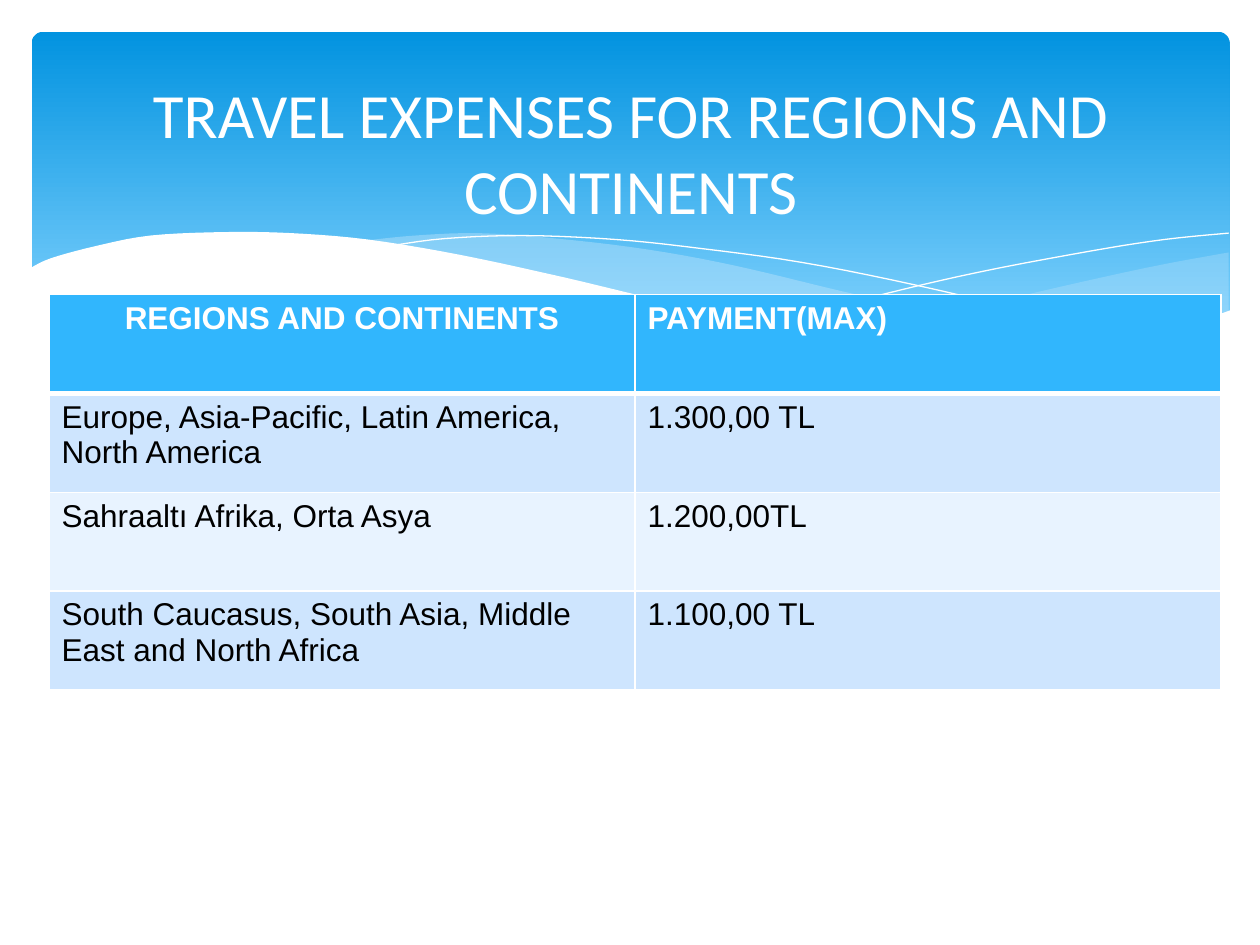
from lxml import etree
from pptx import Presentation
from pptx import util as u
from pptx.dml.color import RGBColor
from pptx.enum import shapes, text
from pptx.oxml.ns import qn

COLORS = {
    "white": "FFFFFF", "black": "000000",
    "band_top": "0293E0", "band_bottom": "83D3FE", "wave": "C6E7FC",
    "header": "31B6FD", "odd_row": "CEE5FE", "even_row": "E8F3FF",
}

# Wave edges in cm from the top left corner of the band.
RIGHT_WAVE_TOP = [(24.13, 4.45), (22.76, 4.7), (21.23, 5.03), (19.15, 5.51),
                  (17.88, 5.79), (16.15, 6.1)]
RIGHT_WAVE_BOTTOM = [(16.15, 6.1), (17.27, 6.25), (18.59, 6.38), (19.76, 6.43),
                     (21.06, 6.38), (22.15, 6.22), (23.11, 6.02), (24.13, 5.64)]
MIDDLE_WAVE_TOP = [(6.63, 4.22), (7.7, 4.11), (9.02, 4.06), (10.59, 4.17),
                   (12.42, 4.39), (14.2, 4.72), (16.33, 5.23), (18.19, 5.64),
                   (19.86, 5.97), (22.05, 6.3)]
MIDDLE_WAVE_BOTTOM = [(22.05, 6.3), (20.9, 6.4), (19.58, 6.43), (18.06, 6.35),
                      (16.26, 6.12), (13.74, 5.66), (10.77, 5), (9.09, 4.62),
                      (7.57, 4.34), (6.63, 4.22)]
FALLING_LINE = [(7.21, 4.32), (8.33, 4.17), (9.93, 4.11), (11.79, 4.19),
                (13.49, 4.37), (15.52, 4.65), (17.83, 5.11), (20.47, 5.74),
                (22.4, 6.27)]
RISING_LINE = [(14.94, 5.89), (17.02, 5.33), (19.08, 4.85), (21.36, 4.42),
               (22.83, 4.19), (24.13, 4.06)]
FRONT_WAVE_TOP = [(24.18, 5.61), (22.99, 6.02), (21.59, 6.3), (19.91, 6.4),
                  (17.81, 6.27), (15.27, 5.92), (12.8, 5.44), (10.72, 4.95),
                  (8.64, 4.5), (6.78, 4.19), (5.21, 4.06), (3.86, 4.04),
                  (2.39, 4.11), (1.3, 4.32), (0.38, 4.57), (-0.05, 4.78)]
FRONT_WAVE_BASE = [(-0.05, 7.72), (24.18, 7.72)]

ROWS = [
    ("REGIONS AND CONTINENTS", "PAYMENT(MAX)"),
    ("Europe, Asia-Pacific, Latin America, North America", "1.300,00 TL"),
    ("Sahraaltı Afrika, Orta Asya", "1.200,00TL"),
    ("South Caucasus, South Asia, Middle East and North Africa", "1.100,00 TL"),
]


def color(name):
    return RGBColor.from_string(COLORS[name])


def smooth(knots, steps=5):
    """Return points on a Catmull-Rom curve through the knots."""
    padded = [knots[0], *knots, knots[-1]]
    points = [knots[0]]
    for a, b, c, d in zip(padded, padded[1:], padded[2:], padded[3:]):
        for step in range(1, steps + 1):
            t = step / steps
            points.append(tuple(
                (2 * q + (r - p) * t + (2 * p - 5 * q + 4 * r - s) * t ** 2
                 + (3 * q - p - 3 * r + s) * t ** 3) / 2
                for p, q, r, s in zip(a, b, c, d)))
    return points


def add_wave(page, box, points, fill=None, opacity=100):
    """Draw a filled wave, or an open white hairline when there is no fill."""
    left, top = box[:2]
    corners = [(u.Cm(left + x), u.Cm(top + y)) for x, y in points]
    builder = page.shapes.build_freeform(*corners[0])
    builder.add_line_segments(corners[1:], close=fill is not None)
    wave = builder.convert_to_shape()
    wave.shadow.inherit = False
    if fill is None:
        wave.fill.background()
        wave.line.color.rgb = color("white")
        wave.line.width = u.Pt(0)
        return
    wave.line.fill.background()
    wave.fill.solid()
    wave.fill.fore_color.rgb = color(fill)
    if opacity < 100:
        tint = wave.fill._xPr.find(qn("a:solidFill"))[0]
        etree.SubElement(tint, qn("a:alpha"), val=str(opacity * 1000))


def add_band(page, box):
    band = page.shapes.add_shape(
        shapes.MSO_SHAPE.ROUNDED_RECTANGLE, *map(u.Cm, box))
    band.adjustments[0] = 0.034
    band.shadow.inherit = False
    band.line.fill.background()
    band.fill.gradient()
    band.fill.gradient_angle = 270
    stops = zip(band.fill.gradient_stops, ("band_top", "band_bottom"), (0, 0.9))
    for stop, name, position in stops:
        stop.color.rgb = color(name)
        stop.position = position

    add_wave(page, box, smooth(RIGHT_WAVE_TOP) + smooth(RIGHT_WAVE_BOTTOM), "wave", 29)
    add_wave(page, box, smooth(MIDDLE_WAVE_TOP) + smooth(MIDDLE_WAVE_BOTTOM), "wave", 40)
    add_wave(page, box, smooth(FALLING_LINE))
    add_wave(page, box, smooth(RISING_LINE))
    add_wave(page, box, smooth(FRONT_WAVE_TOP) + FRONT_WAVE_BASE, "white")


def add_title(page, box, wording):
    frame = page.shapes.add_textbox(*map(u.Cm, box)).text_frame
    frame.word_wrap = True
    frame.vertical_anchor = text.MSO_ANCHOR.MIDDLE
    para = frame.paragraphs[0]
    para.text = wording
    para.alignment = text.PP_ALIGN.CENTER
    para.font.name = "Calibri"
    para.font.size = u.Pt(36)
    para.font.color.rgb = color("white")


def set_borders(cell, bottom):
    """Give the cell white borders; the fill must be set afterwards."""
    properties = cell._tc.get_or_add_tcPr()
    for side, width in (("L", 1), ("R", 1), ("T", 1), ("B", bottom)):
        border = etree.SubElement(
            properties, qn(f"a:ln{side}"), w=str(u.Pt(width)))
        paint = etree.SubElement(border, qn("a:solidFill"))
        etree.SubElement(paint, qn("a:srgbClr"), val=COLORS["white"])


def add_payment_table(page, box):
    table = page.shapes.add_table(
        len(ROWS), len(ROWS[0]), *map(u.Cm, box)).table
    for row, wordings in enumerate(ROWS):
        heading = row == 0
        fill = "header" if heading else "odd_row" if row % 2 else "even_row"
        for column, wording in enumerate(wordings):
            cell = table.cell(row, column)
            set_borders(cell, bottom=3 if heading else 1)
            cell.fill.solid()
            cell.fill.fore_color.rgb = color(fill)
            para = cell.text_frame.paragraphs[0]
            para.text = wording
            para.font.name = "Arial"
            para.font.size = u.Pt(18)
            para.font.bold = heading
            para.font.color.rgb = color("white" if heading else "black")
    table.cell(0, 0).text_frame.paragraphs[0].alignment = text.PP_ALIGN.CENTER


def main():
    deck = Presentation()
    deck.slide_width, deck.slide_height = u.Cm(25.4), u.Cm(19.05)
    page = deck.slides.add_slide(deck.slide_layouts[6])
    add_band(page, (0.64, 0.64, 24.15, 6.86))
    add_title(page, (0.41, 0.76, 24.61, 4.57),
              "TRAVEL EXPENSES FOR REGIONS AND CONTINENTS")
    add_payment_table(page, (0.99, 5.94, 23.62, 7.97))
    deck.save("out.pptx")


if __name__ == "__main__":
    main()
